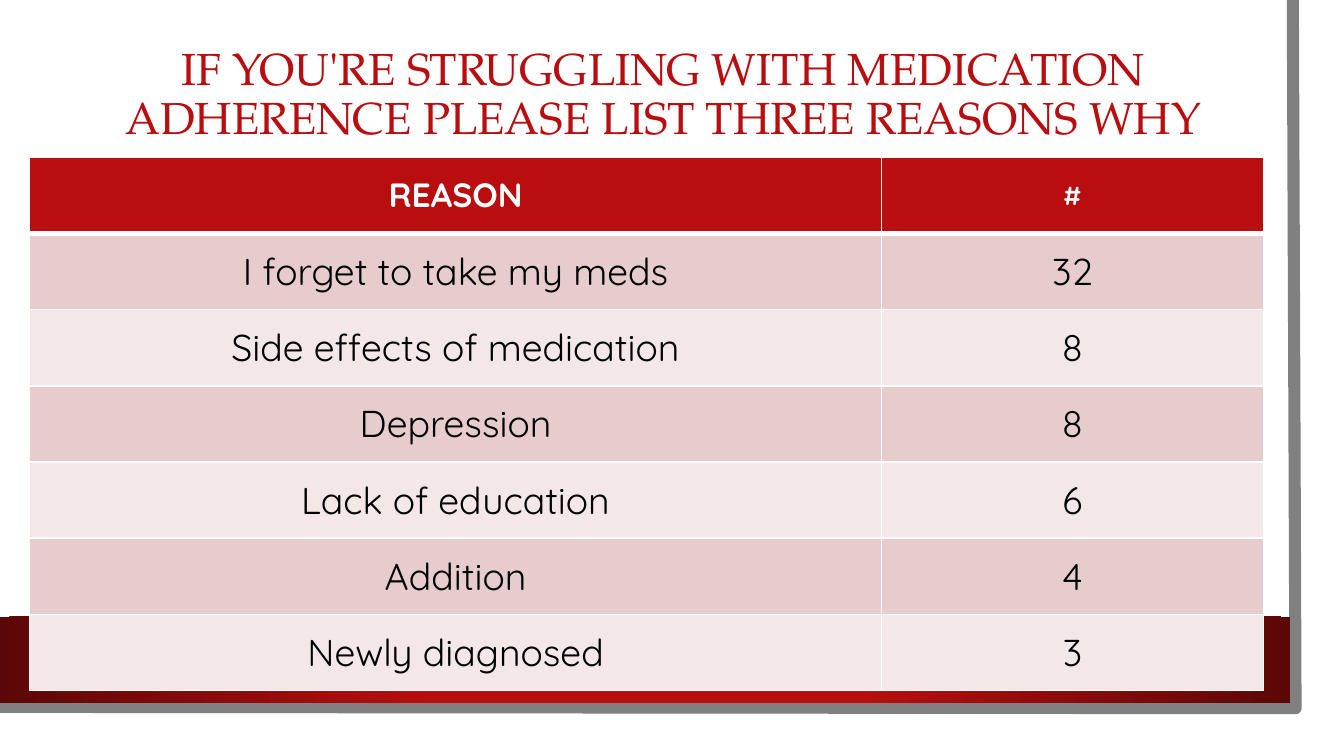
from lxml import etree
from pptx import Presentation
from pptx import util as u
from pptx.dml.color import RGBColor
from pptx.enum import shapes, text
from pptx.oxml import parse_xml
from pptx.oxml.ns import nsdecls, qn

TITLE = "IF YOU'RE STRUGGLING WITH MEDICATION ADHERENCE PLEASE LIST THREE REASONS WHY"
HEADER = ("REASON", "#")
HEADER_SIZES = (18, 14)
REASONS = [
    ("I forget to take my meds", 32),
    ("Side effects of medication", 8),
    ("Depression", 8),
    ("Lack of education", 6),
    ("Addition", 4),
    ("Newly diagnosed", 3),
]
COLUMN_WIDTHS = (6.34, 2.84)
TABLE_HEIGHT = 3.97
RED, DARK_RED, GREY, WHITE, BLACK = "B80E0F", "5C0707", "808080", "FFFFFF", "000000"
BANDS = ("E6CCCC", "F3E7E7")
EDGE_POINTS = [(962, 0), (964, 527), (-2, 526)]  # hundredths of an inch


def color(value):
    return RGBColor.from_string(value)


def paint(target, value):
    target.fill.solid()
    target.fill.fore_color.rgb = color(value)


def style(para, font, size, value, bold=False):
    para.alignment = text.PP_ALIGN.CENTER
    for span in para.runs:
        span.font.name = font
        span.font.size = u.Pt(size)
        span.font.bold = bold
        span.font.color.rgb = color(value)


def add_rectangle(slide, left, top, width, height):
    box = slide.shapes.add_shape(
        shapes.MSO_SHAPE.RECTANGLE, *map(u.Inches, (left, top, width, height)))
    box.shadow.inherit = False
    box.line.fill.background()
    return box


def paint_radial(box, inner, outer):
    """Fill with a gradient that spreads from the centre of the box."""
    box.fill.background()
    gradient = parse_xml(
        f'<a:gradFill {nsdecls("a")} rotWithShape="1"><a:gsLst>'
        f'<a:gs pos="34000"><a:srgbClr val="{inner}"/></a:gs>'
        f'<a:gs pos="100000"><a:srgbClr val="{outer}"/></a:gs></a:gsLst>'
        '<a:path path="circle"><a:fillToRect l="50000" t="50000" r="50000" b="50000"/>'
        '</a:path></a:gradFill>')
    properties = box.element.spPr
    properties.replace(properties.find(qn("a:noFill")), gradient)


def set_borders(cell, **points):
    """Draw white cell borders; keywords are L, R, T and B."""
    properties = cell._tc.get_or_add_tcPr()
    for side, width in points.items():
        line = etree.SubElement(properties, qn(f"a:ln{side}"), w=str(u.Pt(width)))
        fill = etree.SubElement(line, qn("a:solidFill"))
        etree.SubElement(fill, qn("a:srgbClr"), val=WHITE)


def add_background(slide):
    paint(add_rectangle(slide, 0, 0, 9.83, 5.45), WHITE)
    first, *others = EDGE_POINTS
    builder = slide.shapes.build_freeform(*first, scale=u.Inches(0.01))
    builder.add_line_segments(others, close=False)
    edge = builder.convert_to_shape()
    edge.shadow.inherit = False
    edge.fill.background()
    edge.line.color.rgb = color(GREY)
    edge.line.width = u.Pt(6.5)
    paint_radial(add_rectangle(slide, 0, 4.59, 9.6, 0.64), RED, DARK_RED)


def add_title(slide):
    box = slide.shapes.add_textbox(*map(u.Inches, (0.67, 0.24, 8.53, 0.94)))
    frame = box.text_frame
    frame.word_wrap = True
    frame.vertical_anchor = text.MSO_ANCHOR.MIDDLE
    frame.text = TITLE
    frame.paragraphs[0].line_spacing = 0.9
    style(frame.paragraphs[0], "TeX Gyre Pagella", 24, RED)


def add_reasons(slide):
    rows = [HEADER, *REASONS]
    table = slide.shapes.add_table(
        len(rows), len(HEADER), u.Inches(0.22), u.Inches(1.17),
        u.Inches(sum(COLUMN_WIDTHS)), u.Inches(TABLE_HEIGHT)).table
    for column, width in zip(table.columns, COLUMN_WIDTHS):
        column.width = u.Inches(width)
    for r, values in enumerate(rows):
        for c, value in enumerate(values):
            cell = table.cell(r, c)
            set_borders(cell, L=1, R=1, T=3 if r == 1 else 1, B=3 if r == 0 else 1)
            paint(cell, BANDS[(r - 1) % 2] if r else RED)
            cell.vertical_anchor = text.MSO_ANCHOR.MIDDLE
            cell.text_frame.text = str(value)
            style(cell.text_frame.paragraphs[0], "Quicksand",
                  20 if r else HEADER_SIZES[c], BLACK if r else WHITE, bold=r == 0)


deck = Presentation()
deck.slide_width = u.Inches(10)
deck.slide_height = u.Inches(10 * 9 / 16)
page = deck.slides.add_slide(deck.slide_layouts[6])
add_background(page)
add_title(page)
add_reasons(page)
deck.save("out.pptx")
